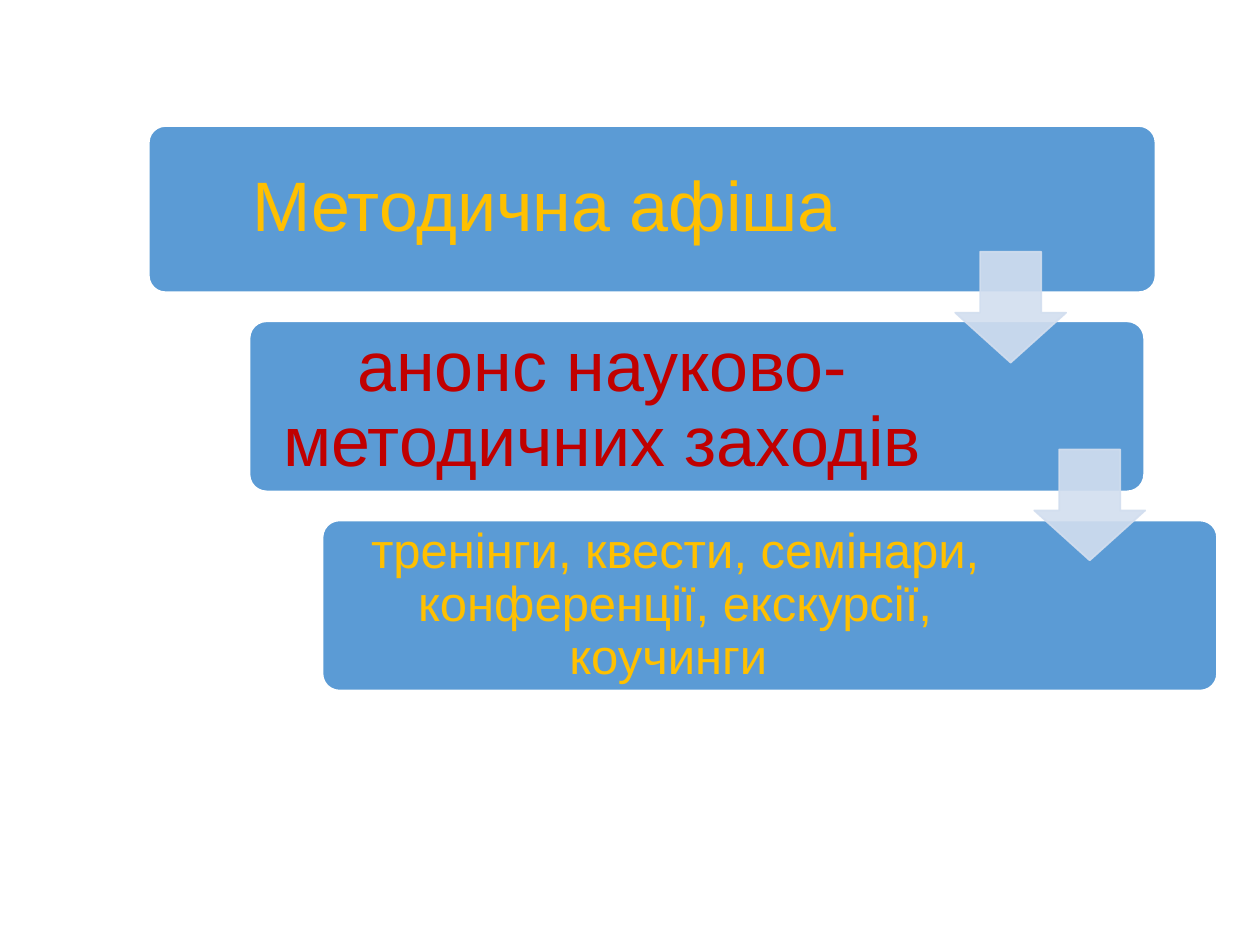
from lxml import etree
from pptx import Presentation
from pptx.dml.color import RGBColor
from pptx.enum.shapes import MSO_SHAPE
from pptx.enum.text import MSO_ANCHOR, PP_ALIGN
from pptx.oxml.ns import qn
from pptx.util import Pt

ROUNDED = MSO_SHAPE.ROUNDED_RECTANGLE
DOWN_ARROW = MSO_SHAPE.DOWN_ARROW
MIDDLE = MSO_ANCHOR.MIDDLE
CENTER = PP_ALIGN.CENTER


def color(value):
    return RGBColor.from_string(value)


def add_outlined(kind, bounds, adjustments, fill, line):
    outlined = slide.shapes.add_shape(kind, *map(Pt, bounds))
    outlined.shadow.inherit = False
    for index, value in enumerate(adjustments):
        outlined.adjustments[index] = value
    outlined.fill.solid()
    outlined.fill.fore_color.rgb = color(fill)
    outlined.line.color.rgb = color(line)
    outlined.line.width = Pt(1)
    return outlined


presentation = Presentation()
presentation.slide_width = Pt(720)
presentation.slide_height = Pt(540)
slide = presentation.slides.add_slide(presentation.slide_layouts[6])

steps = [
    ("Методична афіша ", (85, 72, 575.3, 95), 458, 40, "FFC000", 12),
    ("анонс науково-методичних заходів", (142.6, 183.6, 511.2, 97.2), 397.4, 40, "C00000", 12),
    ("тренінги, квести, семінари, конференції, екскурсії, коучинги ",
     (184.3, 297.4, 511.2, 97.2), 397.4, 28, "FFC000", 8.4),
]
inset = 2.8

for wording, bounds, label_width, size, text_color, margin in steps:
    add_outlined(ROUNDED, bounds, [0.1], "5B9BD5", "FFFFFF")
    left, top, width, height = bounds
    label = slide.shapes.add_textbox(
        Pt(left + inset), Pt(top + inset), Pt(label_width), Pt(height - 2 * inset))
    frame = label.text_frame
    frame_format = {
        "word_wrap": True,
        "vertical_anchor": MIDDLE,
        "margin_left": Pt(margin),
        "margin_top": Pt(margin),
        "margin_right": Pt(margin),
        "margin_bottom": Pt(margin),
    }
    for attribute, value in frame_format.items():
        setattr(frame, attribute, value)
    paragraph = frame.paragraphs[0]
    for attribute, value in {"alignment": CENTER, "line_spacing": 0.9}.items():
        setattr(paragraph, attribute, value)
    run = paragraph.add_run()
    run.text = wording
    for attribute, value in {"name": "Arial", "size": Pt(size)}.items():
        setattr(run.font, attribute, value)
    run.font.color.rgb = color(text_color)

for left, top in [(545.8, 143.8), (591, 256.8)]:
    arrow = add_outlined(DOWN_ARROW, (left, top, 63.4, 63.4), [0.55, 0.45], "D2DEEF", "D2DEEF")
    arrow.adjustments[0] = 0.55
    arrow.adjustments[1] = 0.45
    for shade in arrow.element.spPr.iter(qn("a:srgbClr")):
        etree.SubElement(shade, qn("a:alpha"), val="90000")

presentation.save("out.pptx")
